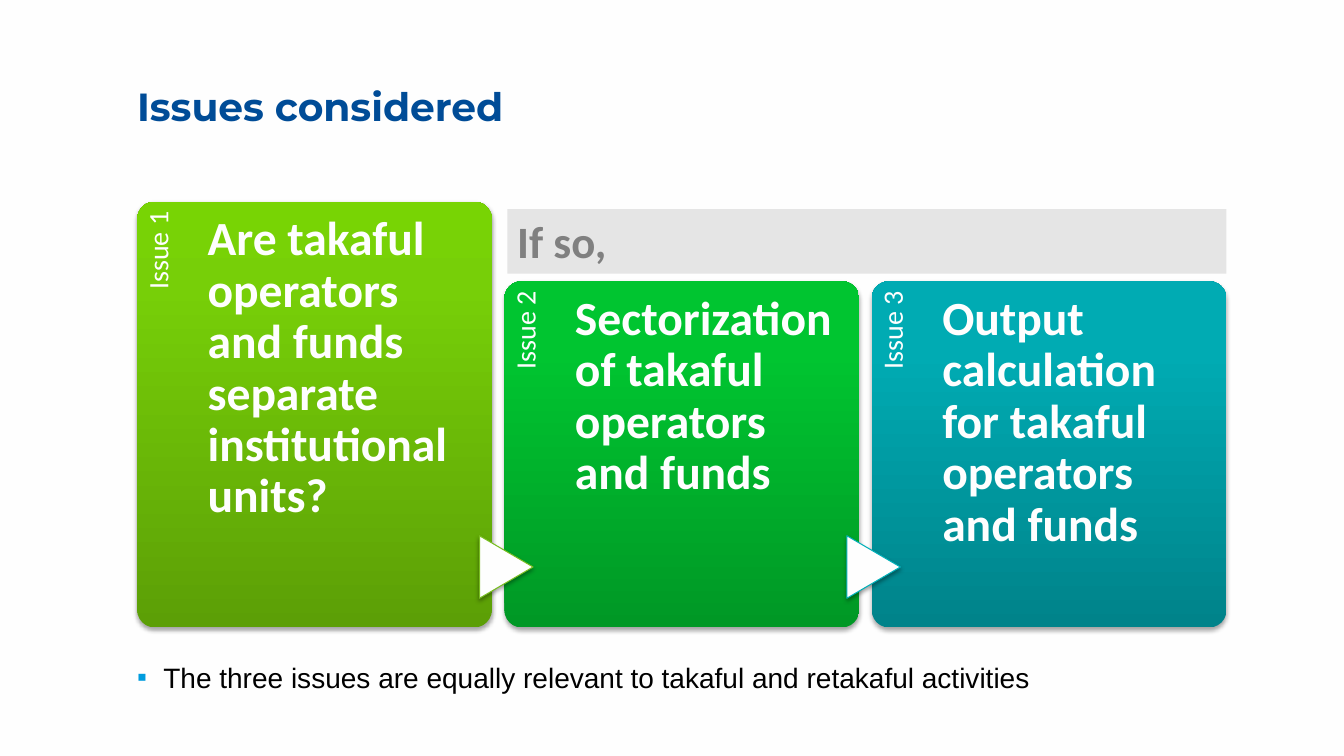
from dataclasses import dataclass

import copy

import lxml.etree
import pptx
import pptx.dml.color
import pptx.enum.shapes
import pptx.enum.text
import pptx.oxml.ns
import pptx.util

qn = pptx.oxml.ns.qn
Align = pptx.enum.text.PP_ALIGN
Anchor = pptx.enum.text.MSO_ANCHOR
Shape = pptx.enum.shapes.MSO_SHAPE

WHITE = "FEFEFE"

# Shares of the slide's width (x) and height (y), in percent
MARGIN = 10.2
CARD_PITCH, CARD_WIDTH, CARD_BOTTOM = 27.33, 26.4, 83
LABEL_WIDTH, QUESTION_WIDTH, LABEL_SHARE = 5.25, 19.65, 0.82
ARROW_SHIFT, ARROW_MIDDLE, ARROW_LENGTH, ARROW_SPAN = 0.14, 75, 3.98, 8.27

prs = pptx.Presentation()
prs.slide_width = pptx.util.Inches(13.33)
prs.slide_height = pptx.util.Inches(7.5)
slide = prs.slides.add_slide(prs.slide_layouts[6])


@dataclass
class Box:
    left: float
    top: float
    width: float
    height: float

    def emu(self, rotation: int = 0) -> tuple[int, ...]:
        """Frame in EMU; a quarter turn swaps the sides around the centre."""
        left, width = (int(prs.slide_width * v / 100) for v in (self.left, self.width))
        top, height = (int(prs.slide_height * v / 100) for v in (self.top, self.height))
        if rotation % 180 == 0:
            return left, top, width, height
        shift = (width - height) // 2
        return left + shift, top - shift, height, width


@dataclass
class Style:
    size: float
    color: str
    font: str = "Calibri"
    bold: bool = False
    spacing: float = 1.0
    align: Align = Align.LEFT
    anchor: Anchor = Anchor.TOP
    insets: tuple[float, ...] = (0, 0, 0, 0)


@dataclass
class Issue:
    label: str
    question: str
    top: float
    gradient: tuple[str, str, str]
    arrow_line: str = ""


TITLE = Style(28, "004C97", "Montserrat", True, 0.9, anchor=Anchor.MIDDLE)
LABEL = Style(20, WHITE, spacing=0.9, align=Align.RIGHT, insets=(0, 0.07, 0.1, 0))
QUESTION = Style(34, WHITE, bold=True, spacing=0.9, insets=(0, 0.13, 0, 0))
CONDITION = Style(32, "808080", bold=True, insets=(0.1, 0.05, 0.1, 0.05))
REMARK = Style(20, "000000", "Arial", insets=(0, 0.15, 0, 0))

ISSUES = [
    Issue("Issue 1", "Are takaful operators and funds separate institutional units?",
          26.67, ("5C9F06", "77CF08", "78D404")),
    Issue("Issue 2", "Sectorization of takaful operators and funds",
          37.2, ("009825", "00C530", "00C631"), "78BE20"),
    Issue("Issue 3", "Output calculation for takaful operators and funds",
          37.2, ("00838A", "00ABB3", "00ABB4"), "00B0B9"),
]


def rgb(color: str) -> pptx.dml.color.RGBColor:
    return pptx.dml.color.RGBColor.from_string(color)


def write(holder, text: str, style: Style):
    frame = holder.text_frame
    frame.word_wrap = True
    frame.vertical_anchor = style.anchor
    (frame.margin_left, frame.margin_top,
     frame.margin_right, frame.margin_bottom) = map(pptx.util.Inches, style.insets)
    paragraph = frame.paragraphs[0]
    paragraph.alignment = style.align
    paragraph.line_spacing = style.spacing
    run = paragraph.add_run()
    run.text = text
    run.font.name, run.font.size = style.font, pptx.util.Pt(style.size)
    run.font.bold = style.bold
    run.font.color.rgb = rgb(style.color)
    return paragraph


def add_text(box: Box, text: str, style: Style, rotation: int = 0):
    holder = slide.shapes.add_textbox(*box.emu(rotation))
    holder.rotation = rotation
    return write(holder, text, style)


def add_plain_shape(kind: Shape, box: Box, rotation: int = 0):
    """Add a shape with neither line nor shadow."""
    shape = slide.shapes.add_shape(kind, *box.emu(rotation))
    shape.rotation = rotation
    shape.shadow.inherit = False
    shape.line.fill.background()
    return shape


def cast_shadow(shape) -> None:
    effects = shape._element.spPr.find(qn("a:effectLst"))
    shadow = lxml.etree.SubElement(
        effects, qn("a:outerShdw"), blurRad=str(pptx.util.Pt(3.1)),
        dist=str(pptx.util.Pt(1.8)), dir="5400000", rotWithShape="0")
    color = lxml.etree.SubElement(shadow, qn("a:srgbClr"), val="000000")
    lxml.etree.SubElement(color, qn("a:alpha"), val="35000")


def shade(shape, colors: tuple[str, str, str]) -> None:
    """Fill with a gradient that rises from the bottom edge."""
    shape.fill.gradient()
    shape.fill.gradient_angle = 90
    stops = shape._element.spPr.find(qn("a:gradFill")).find(qn("a:gsLst"))
    stops.append(copy.deepcopy(stops[0]))
    for stop, color, position in zip(shape.fill.gradient_stops, colors, (0, 0.8, 1)):
        stop.color.rgb = rgb(color)
        stop.position = position


def add_arrow(card_left: float, line_color: str) -> None:
    box = Box(card_left + ARROW_SHIFT - ARROW_LENGTH / 2,
              ARROW_MIDDLE - ARROW_SPAN / 2, ARROW_LENGTH, ARROW_SPAN)
    arrow = add_plain_shape(Shape.FLOWCHART_EXTRACT, box, 90)
    arrow.fill.solid()
    arrow.fill.fore_color.rgb = rgb(WHITE)
    arrow.line.color.rgb = rgb(line_color)
    arrow.line.width = pptx.util.Pt(0.75)
    cast_shadow(arrow)


def add_issue(column: int, issue: Issue) -> None:
    left = MARGIN + column * CARD_PITCH
    height = CARD_BOTTOM - issue.top
    card = add_plain_shape(Shape.ROUNDED_RECTANGLE,
                           Box(left, issue.top, CARD_WIDTH, height))
    card.adjustments[0] = 0.05
    shade(card, issue.gradient)
    cast_shadow(card)
    add_text(Box(left, issue.top, LABEL_WIDTH, height * LABEL_SHARE),
             issue.label, LABEL, 270)
    if issue.arrow_line:
        add_arrow(left, issue.arrow_line)
    add_text(Box(left + LABEL_WIDTH, issue.top, QUESTION_WIDTH, height),
             issue.question, QUESTION)


def add_bullet(paragraph, symbol: str, color: str) -> None:
    properties = paragraph._p.get_or_add_pPr()
    indent = pptx.util.Inches(0.26)
    properties.set("marL", str(indent))
    properties.set("indent", str(-indent))
    bullet_color = lxml.etree.SubElement(properties, qn("a:buClr"))
    lxml.etree.SubElement(bullet_color, qn("a:srgbClr"), val=color)
    lxml.etree.SubElement(properties, qn("a:buFont"), typeface="Arial")
    lxml.etree.SubElement(properties, qn("a:buChar"), char=symbol)


def main() -> None:
    slide.background.fill.solid()
    slide.background.fill.fore_color.rgb = rgb(WHITE)
    add_text(Box(MARGIN, 7.2, 79.67, 14.27), "Issues considered", TITLE)
    for column, issue in enumerate(ISSUES):
        add_issue(column, issue)

    condition = add_plain_shape(Shape.RECTANGLE, Box(37.75, 27.67, 53.5, 8.53))
    condition.fill.solid()
    condition.fill.fore_color.rgb = rgb("E5E5E5")
    write(condition, "If so,", CONDITION)

    remark = add_text(
        Box(MARGIN, 85.33, 79.67, 9.07),
        "The three issues are equally relevant to takaful and retakaful activities",
        REMARK)
    remark.space_before = pptx.util.Pt(6)
    add_bullet(remark, "▪", "009CDE")
    prs.save("out.pptx")


if __name__ == "__main__":
    main()
